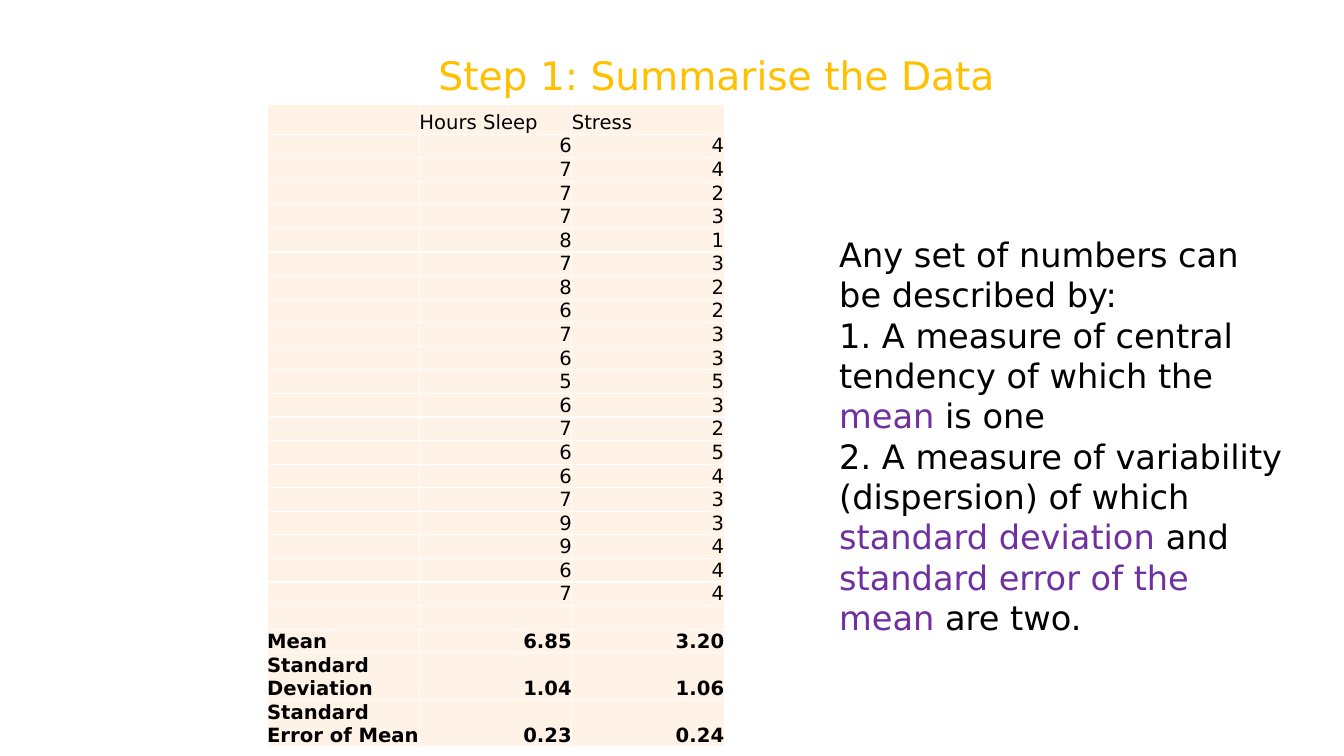
from dataclasses import dataclass

import lxml.etree
import pptx
import pptx.dml.color
import pptx.enum.text
import pptx.oxml.ns
import pptx.util

Cm = pptx.util.Cm
Pt = pptx.util.Pt
RGB = pptx.dml.color.RGBColor
qn = pptx.oxml.ns.qn


@dataclass(frozen=True)
class Theme:
    font: str = "DejaVu Sans"
    ink: str = "000000"
    title: str = "FFC000"
    term: str = "7030A0"
    cell: str = "FFF3E7"
    border: str = "FFFFFF"
    title_size: int = 28
    body_size: int = 24
    table_size: int = 14
    border_width: int = 1


@dataclass(frozen=True)
class Box:
    left: float
    top: float
    width: float
    height: float

    def lengths(self) -> tuple[int, int, int, int]:
        return Cm(self.left), Cm(self.top), Cm(self.width), Cm(self.height)


@dataclass(frozen=True)
class Phrase:
    text: str
    is_term: bool = False


@dataclass(frozen=True)
class TableRow:
    label: str
    sleep: str
    stress: str
    height: float = 0.43
    bold: bool = False
    numeric: bool = True


THEME = Theme()
TITLE_BOX = Box(10.8, 1.17, 14.94, 1.45)
EXPLANATION_BOX = Box(20.9, 5.77, 11.73, 10.52)
TABLE_BOX = Box(6.73, 2.62, 11.53, 16.15)

EXPLANATION = [
    [Phrase("Any set of numbers can be described by:")],
    [
        Phrase("1. A measure of central tendency of which the "),
        Phrase("mean", True),
        Phrase(" is one"),
    ],
    [
        Phrase("2. A measure of variability (dispersion) of which "),
        Phrase("standard deviation ", True),
        Phrase("and "),
        Phrase("standard error of the mean ", True),
        Phrase("are two."),
    ],
]

HOURS_SLEEP = "67778786765676679967"
STRESS = "44231322335325433444"
ROWS = [
    TableRow("", "Hours Sleep", "Stress", height=0.76, numeric=False),
    *[TableRow("", sleep, stress) for sleep, stress in zip(HOURS_SLEEP, STRESS)],
    TableRow("", "", ""),
    TableRow("Mean", "6.85", "3.20", bold=True),
    TableRow("Standard Deviation", "1.04", "1.06", height=0.76, bold=True),
    TableRow("Standard Error of Mean", "0.23", "0.24", height=1.14, bold=True),
]


def style_font(font, size: int, color: str, bold: bool = False) -> None:
    font.name = THEME.font
    font.size = Pt(size)
    font.bold = bold
    font.color.rgb = RGB.from_string(color)


def add_text(slide, box: Box, paragraphs: list[list[Phrase]], size: int,
             color: str, wrap: bool) -> None:
    frame = slide.shapes.add_textbox(*box.lengths()).text_frame
    frame.word_wrap = wrap
    frame.auto_size = pptx.enum.text.MSO_AUTO_SIZE.SHAPE_TO_FIT_TEXT
    for index, phrases in enumerate(paragraphs):
        paragraph = frame.add_paragraph() if index else frame.paragraphs[0]
        for phrase in phrases:
            run = paragraph.add_run()
            run.text = phrase.text
            style_font(run.font, size, THEME.term if phrase.is_term else color)


def add_borders(cell) -> None:
    properties = cell._tc.get_or_add_tcPr()
    for position, side in enumerate(("a:lnL", "a:lnR", "a:lnT", "a:lnB")):
        line = lxml.etree.Element(qn(side), w=str(Pt(THEME.border_width)))
        fill = lxml.etree.SubElement(line, qn("a:solidFill"))
        lxml.etree.SubElement(fill, qn("a:srgbClr"), val=THEME.border)
        properties.insert(position, line)


def fill_cell(cell, text: str, bold: bool, align_right: bool) -> None:
    cell.margin_left = cell.margin_right = cell.margin_top = cell.margin_bottom = 0
    cell.vertical_anchor = pptx.enum.text.MSO_ANCHOR.BOTTOM
    cell.fill.solid()
    cell.fill.fore_color.rgb = RGB.from_string(THEME.cell)
    add_borders(cell)
    paragraph = cell.text_frame.paragraphs[0]
    paragraph.text = text
    if align_right:
        paragraph.alignment = pptx.enum.text.PP_ALIGN.RIGHT
    for run in paragraph.runs:
        style_font(run.font, THEME.table_size, THEME.ink, bold)
    if not text:
        lxml.etree.SubElement(paragraph._p, qn("a:endParaRPr"),
                              sz=str(THEME.table_size * 100))


def add_data_table(slide, box: Box, rows: list[TableRow]) -> None:
    table_frame = slide.shapes.add_table(len(rows), 3, *box.lengths())
    table = table_frame.table
    table.first_row = False
    table.horz_banding = False
    for column in table.columns:
        column.width = Cm(round(box.width / 3, 2))
    for row_index, row in enumerate(rows):
        table.rows[row_index].height = Cm(row.height)
        for column_index, text in enumerate((row.label, row.sleep, row.stress)):
            fill_cell(table.cell(row_index, column_index), text, row.bold,
                      row.numeric and column_index > 0)
    table_frame.height = Cm(box.height)


def main() -> None:
    presentation = pptx.Presentation()
    presentation.slide_width = Cm(33.87)
    presentation.slide_height = Cm(19.05)
    slide = presentation.slides.add_slide(presentation.slide_layouts[6])
    add_text(slide, EXPLANATION_BOX, EXPLANATION, THEME.body_size, THEME.ink, True)
    add_text(slide, TITLE_BOX, [[Phrase("Step 1: Summarise the Data")]],
             THEME.title_size, THEME.title, False)
    add_data_table(slide, TABLE_BOX, ROWS)
    presentation.save("out.pptx")


if __name__ == "__main__":
    main()
